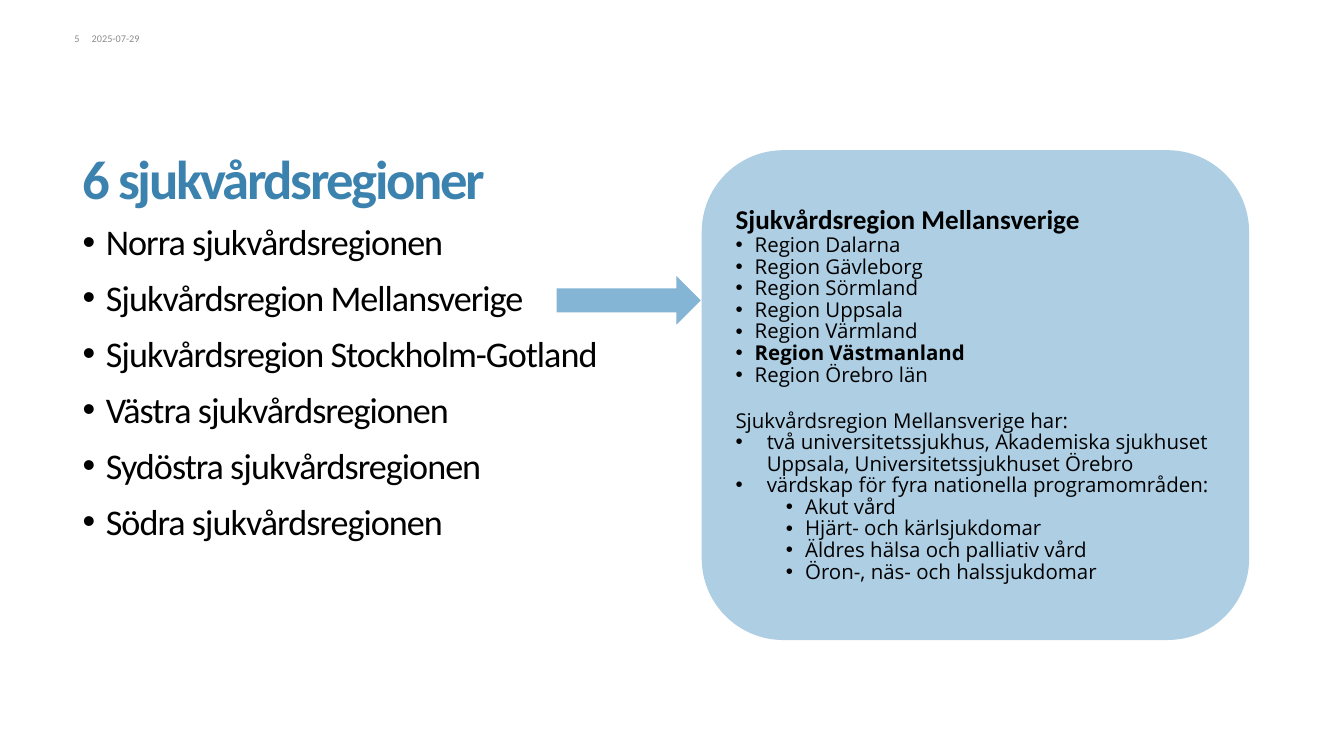
import pptx
import pptx.util
import pptx.dml.color
import pptx.enum.shapes
import pptx.enum.text
import pptx.oxml.ns
from lxml import etree

Inches = pptx.util.Inches
RGBColor = pptx.dml.color.RGBColor
ALIGN = pptx.enum.text.PP_ALIGN
ANCHOR = pptx.enum.text.MSO_ANCHOR
SHAPE = pptx.enum.shapes.MSO_SHAPE

TITLE_BLUE = RGBColor(0x3C, 0x82, 0xAF)
ARROW_BLUE = RGBColor(0x84, 0xB5, 0xD5)
PANEL_BLUE = RGBColor(0xAD, 0xCE, 0xE3)
GREY = RGBColor(0x8C, 0x8C, 0x8C)
BLACK = RGBColor(0, 0, 0)

TITLE = "6 sjukvårdsregioner"
PAGE_NUMBER = "5"
DATE = "2025-07-29"
CARE_REGIONS = [
    "Norra sjukvårdsregionen",
    "Sjukvårdsregion Mellansverige",
    "Sjukvårdsregion Stockholm-Gotland",
    "Västra sjukvårdsregionen",
    "Sydöstra sjukvårdsregionen",
    "Södra sjukvårdsregionen",
]
PANEL_HEADING = "Sjukvårdsregion Mellansverige"
MEMBERS = [
    "Region Dalarna",
    "Region Gävleborg",
    "Region Sörmland",
    "Region Uppsala",
    "Region Värmland",
    "Region Västmanland",
    "Region Örebro län",
]
HOME_REGION = "Region Västmanland"
FACTS_INTRO = "Sjukvårdsregion Mellansverige har:"
FACTS = [
    "två universitetssjukhus, Akademiska sjukhuset Uppsala, Universitetssjukhuset Örebro",
    "värdskap för fyra nationella programområden:",
]
PROGRAMMES = [
    "Akut vård",
    "Hjärt- och kärlsjukdomar",
    "Äldres hälsa och palliativ vård",
    "Öron-, näs- och halssjukdomar",
]


def write(frame, text, size, font="Calibri", color=BLACK, bold=False, align=ALIGN.LEFT,
          line=1.0, before=0, after=0, tracking=0, margin=0, hang=0, level=0):
    """Write one formatted paragraph, filling the first one while it is empty."""
    para = frame.paragraphs[0]
    if para.runs:
        para = frame.add_paragraph()
    para.level = level
    para.alignment = align
    if hang:
        properties = para._p.get_or_add_pPr()
        properties.set("marL", str(Inches(margin)))
        properties.set("indent", str(-Inches(hang)))
        for tag, name, value in (("a:buFont", "typeface", "Arial"), ("a:buChar", "char", "•")):
            etree.SubElement(properties, pptx.oxml.ns.qn(tag)).set(name, value)
    para.line_spacing = line
    para.space_before = pptx.util.Pt(before)
    para.space_after = pptx.util.Pt(after)
    span = para.add_run()
    span.text = text
    span.font.size = pptx.util.Pt(size)
    span.font.name = font
    span.font.bold = bold
    span.font.color.rgb = color
    if tracking:
        span._r.get_or_add_rPr().set("spc", str(round(tracking * 100)))


def prepare(frame, anchor=ANCHOR.TOP, bottom=0):
    """Clear the insets of a text frame and set its wrapping and anchor."""
    frame.word_wrap = True
    frame.auto_size = pptx.enum.text.MSO_AUTO_SIZE.NONE
    frame.vertical_anchor = anchor
    frame.margin_left = frame.margin_top = frame.margin_right = 0
    frame.margin_bottom = Inches(bottom)
    return frame


def add_text_box(page, left, top, width, height):
    """Add a text box without insets and return its frame."""
    box = page.shapes.add_textbox(Inches(left), Inches(top), Inches(width), Inches(height))
    return prepare(box.text_frame)


def add_block(page, kind, color, left, top, width, height):
    """Add a flat preset shape without outline."""
    block = page.shapes.add_shape(kind, Inches(left), Inches(top), Inches(width), Inches(height))
    block.shadow.inherit = False
    block.fill.solid()
    block.fill.fore_color.rgb = color
    block.line.fill.background()
    return block


def fill_panel(frame):
    """Write the heading, members and facts of the highlighted region."""
    frame.word_wrap = True
    frame.vertical_anchor = ANCHOR.MIDDLE
    body = {"size": 14.6, "font": "Open Sans", "line": 0.88}
    write(frame, PANEL_HEADING, 19.4, bold=True, line=0.88)
    for member in MEMBERS:
        write(frame, member, bold=member == HOME_REGION, margin=0.19, hang=0.19, **body)
    write(frame, FACTS_INTRO, before=17.4, **body)
    for fact in FACTS:
        write(frame, fact, margin=0.31, hang=0.31, **body)
    for programme in PROGRAMMES:
        write(frame, programme, margin=0.69, hang=0.19, level=1, **body)


def main():
    """Build the slide and save it."""
    deck = pptx.Presentation()
    deck.slide_width, deck.slide_height = Inches(13.33), Inches(7.5)
    page = deck.slides.add_slide(deck.slide_layouts[5])

    title = page.shapes.title
    title.left, title.top = Inches(0.82), Inches(0.81)
    title.width, title.height = Inches(11.68), Inches(1.36)
    write(prepare(title.text_frame, ANCHOR.BOTTOM, 0.08), TITLE, 39.1, color=TITLE_BLUE,
          bold=True, line=0.85, tracking=-1.7)

    write(add_text_box(page, 0.55, 0.32, 0.24, 0.12), PAGE_NUMBER, 7.3, color=GREY,
          align=ALIGN.RIGHT)
    write(add_text_box(page, 0.91, 0.32, 0.53, 0.12), DATE, 7.3, color=GREY)

    region_list = add_text_box(page, 0.82, 2.25, 11.68, 3.97)
    for region in CARE_REGIONS:
        write(region_list, region, 25.8, line=0.84, after=13.9, tracking=-0.7,
              margin=0.23, hang=0.23)

    add_block(page, SHAPE.RIGHT_ARROW, ARROW_BLUE, 5.52, 2.74, 1.43, 0.48)
    panel = add_block(page, SHAPE.ROUNDED_RECTANGLE, PANEL_BLUE, 6.96, 1.49, 5.43, 4.86)
    fill_panel(panel.text_frame)

    deck.save("out.pptx")


if __name__ == "__main__":
    main()
